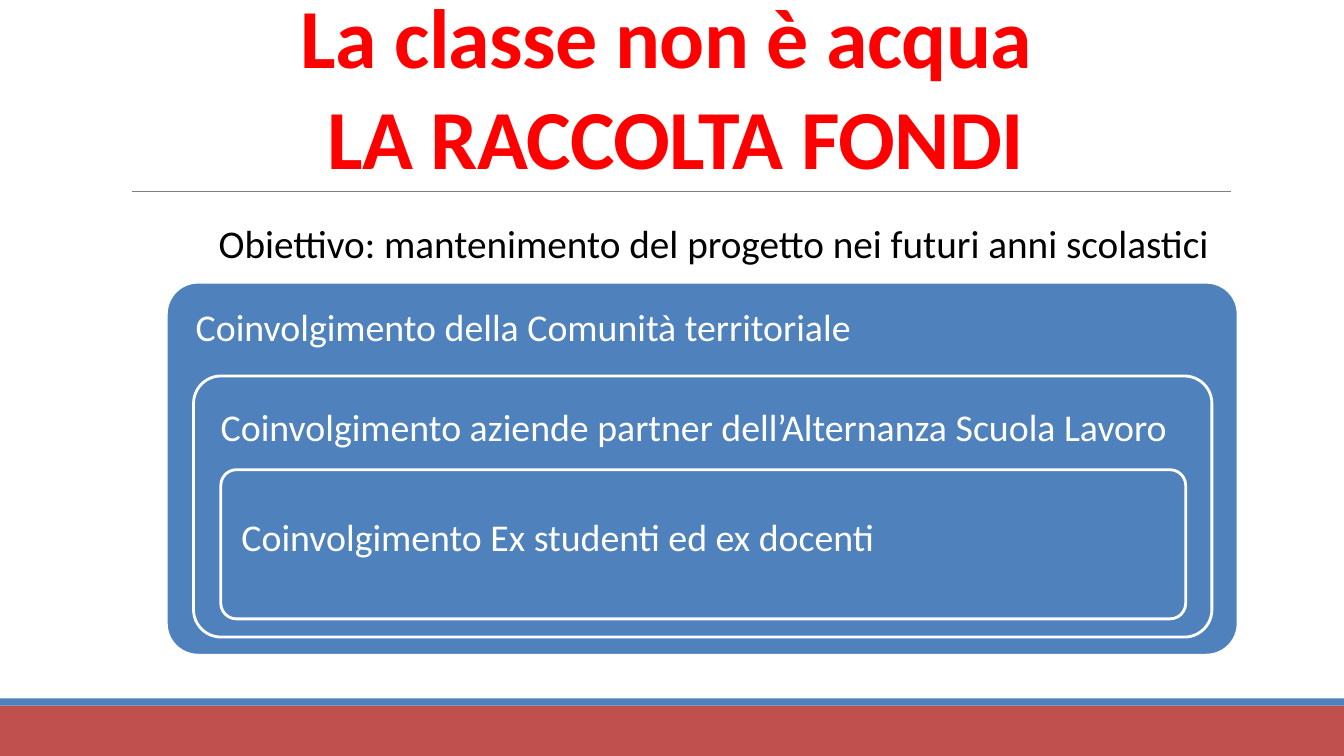
from dataclasses import dataclass

from lxml import etree
from pptx import Presentation
from pptx.dml.color import RGBColor
from pptx.enum.shapes import MSO_CONNECTOR, MSO_SHAPE
from pptx.enum.text import MSO_ANCHOR, PP_ALIGN
from pptx.oxml.ns import qn
from pptx.util import Pt

PX = 9144
RECT = MSO_SHAPE.RECTANGLE
ROUND = MSO_SHAPE.ROUNDED_RECTANGLE
LINE = MSO_CONNECTOR.STRAIGHT
LEFT, CENTER = PP_ALIGN.LEFT, PP_ALIGN.CENTER
TOP, MIDDLE, BOTTOM = MSO_ANCHOR.TOP, MSO_ANCHOR.MIDDLE, MSO_ANCHOR.BOTTOM


@dataclass(frozen=True)
class Theme:
    font: str = "Calibri"
    blue: str = "4F81BD"
    brick: str = "C0504D"
    red: str = "FF0000"
    white: str = "FFFFFF"
    black: str = "000000"
    gray: str = "808080"
    title: int = 60
    goal: int = 28
    level: int = 27


THEME = Theme()
TITLE = ["La classe non è acqua ", "LA RACCOLTA FONDI"]
GOAL = "Obiettivo: mantenimento del progetto nei futuri anni scolastici"
LEVELS = [
    ("Coinvolgimento della Comunità territoriale", 0.085, (20, 20, 11, 297)),
    ("Coinvolgimento aziende partner dell’Alternanza Scuola Lavoro", 0.105,
     (19, 19, 11, 173)),
    ("Coinvolgimento Ex studenti ed ex docenti", 0.105, (16, 16, 11, 26)),
]


def emu(*sizes):
    return [size * PX for size in sizes]


def color(code):
    return RGBColor.from_string(code)


def set_frame(frame, pads, anchor):
    frame.margin_left, frame.margin_top, frame.margin_right, frame.margin_bottom = emu(*pads)
    frame.vertical_anchor = anchor
    frame.word_wrap = True


def add_run(para, text, size, code, bold=False):
    run = para.add_run()
    run.text = text
    run.font.name = THEME.font
    run.font.size = Pt(size)
    run.font.bold = bold
    run.font.color.rgb = color(code)
    return run


def add_block(slide, kind, box, fill):
    shape = slide.shapes.add_shape(kind, *emu(*box))
    shape.shadow.inherit = False
    shape.fill.solid()
    shape.fill.fore_color.rgb = color(fill)
    shape.line.fill.background()
    return shape


def add_footer(slide, box):
    x, y, w, h = box
    strip = 7
    add_block(slide, RECT, (x, y + strip, w, h - strip), THEME.brick)
    add_block(slide, RECT, (x, y, w, strip), THEME.blue)


def add_title(slide, box):
    x, y, w, h = box
    base = y + h
    rule = slide.shapes.add_connector(LINE, *emu(x + 11, base, x + w + 1, base))
    rule.line.color.rgb = color(THEME.gray)
    rule.line.width = Pt(0.5)
    etree.SubElement(rule._element.spPr, qn("a:effectLst"))
    frame = slide.shapes.add_textbox(*emu(*box)).text_frame
    set_frame(frame, (0, 0, 0, 5), BOTTOM)
    para = frame.paragraphs[0]
    para.alignment = CENTER
    for row, text in enumerate(TITLE):
        if row:
            para.add_line_break()
        run = add_run(para, text, THEME.title, THEME.red, True)
        run._r.get_or_add_rPr().set("spc", "-50")


def add_goal(slide, box):
    frame = slide.shapes.add_textbox(*emu(*box)).text_frame
    set_frame(frame, (10, 5, 0, 5), TOP)
    add_run(frame.paragraphs[0], GOAL, THEME.goal, THEME.black)


def add_levels(slide, box):
    x, y, w, h = box
    for step, (text, curve, pads) in enumerate(LEVELS):
        place = (x + 27 * step, y + 93 * step, w - 53 * step, h - 111 * step)
        shape = add_block(slide, ROUND, place, THEME.blue)
        shape.adjustments[0] = curve
        shape.line.color.rgb = color(THEME.white)
        shape.line.width = Pt(2)
        set_frame(shape.text_frame, pads, MIDDLE)
        para = shape.text_frame.paragraphs[0]
        para.alignment = LEFT
        para.line_spacing = 0.9
        para.space_after = Pt(9.4)
        add_run(para, text, THEME.level, THEME.white)


def main():
    deck = Presentation()
    deck.slide_width, deck.slide_height = emu(1333, 750)
    slide = deck.slides.add_slide(deck.slide_layouts[6])
    add_footer(slide, (0, 693, 1333, 57))
    add_title(slide, (120, 31, 1100, 159))
    add_levels(slide, (165, 280, 1063, 370))
    add_goal(slide, (207, 213, 1005, 57))
    deck.save("out.pptx")


if __name__ == "__main__":
    main()
